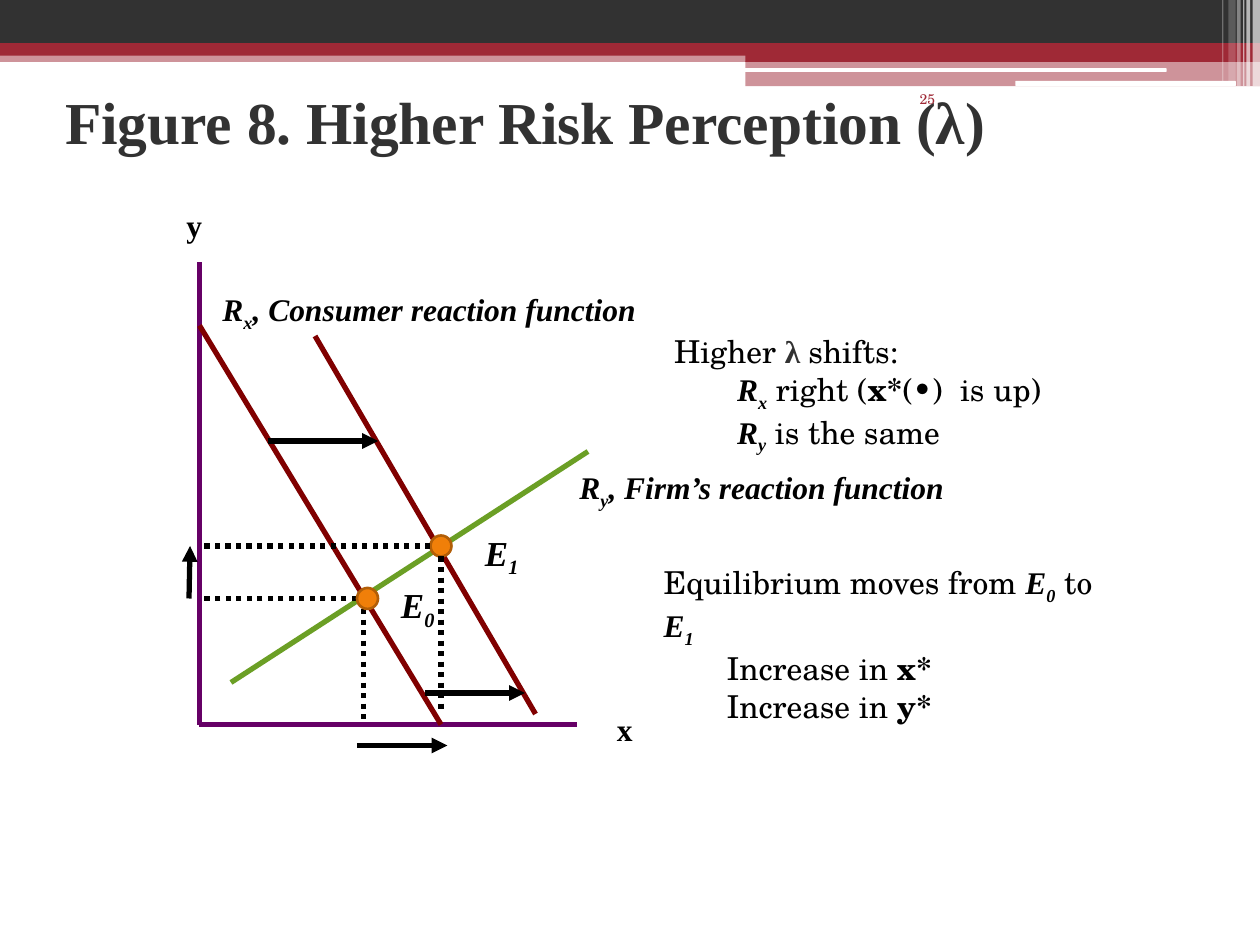
from dataclasses import dataclass
from typing import NamedTuple

from lxml.etree import SubElement
from pptx import Presentation
from pptx.dml.color import RGBColor
from pptx.enum.dml import MSO_LINE
from pptx.enum.shapes import MSO_CONNECTOR, MSO_SHAPE
from pptx.enum.text import MSO_ANCHOR, MSO_AUTO_SIZE, PP_ALIGN
from pptx.oxml.ns import qn
from pptx.util import Inches, Pt

COLS, ROWS = 120, 90


@dataclass(frozen=True)
class Theme:
    serif: str = "Times New Roman"
    school: str = "TeX Gyre Schola"
    dark: str = "323232"
    red: str = "9F2936"
    white: str = "FFFFFF"
    black: str = "000000"
    axis: str = "660066"
    maroon: str = "800000"
    green: str = "6B9F25"
    orange: str = "F07F09"
    rim: str = "B25E07"
    head: int = 34
    point: int = 20
    text: int = 18
    page: int = 8
    stroke: float = 3
    edge: float = 1.5


THEME = Theme()


class Box(NamedTuple):
    col: float
    row: float
    wide: float
    high: float


class Bar(NamedTuple):
    box: Box
    fill: str
    alpha: int = 100
    form: MSO_SHAPE = MSO_SHAPE.RECTANGLE


class Line(NamedTuple):
    start: tuple[float, float]
    end: tuple[float, float]
    color: str = THEME.black
    dots: bool = False
    arrow: bool = False


class Run(NamedTuple):
    text: str
    bold: bool = False
    face: str = THEME.school
    slant: bool = False
    sub: bool = False
    color: str = THEME.black


class Para(NamedTuple):
    runs: list[Run]
    level: int = 0


class Label(NamedTuple):
    box: Box
    runs: list[Run]
    size: int = THEME.text
    align: PP_ALIGN = PP_ALIGN.LEFT


def term(base: str, sub: str, tail: str = "") -> list[Run]:
    parts = [(base, False), (sub, True), (tail, False)]
    return [Run(text, True, THEME.serif, True, low) for text, low in parts if text]


def place(deck, box: Box) -> tuple[int, int, int, int]:
    cell_w, cell_h = deck.slide_width / COLS, deck.slide_height / ROWS
    return (round(box.col * cell_w), round(box.row * cell_h),
            round(box.wide * cell_w), round(box.high * cell_h))


def paint(shape, color: str, alpha: int = 100) -> None:
    shape.shadow.inherit = False
    shape.fill.solid()
    shape.fill.fore_color.rgb = RGBColor.from_string(color)
    if alpha < 100:
        tint = shape.fill._xPr.find(qn("a:solidFill"))[0]
        SubElement(tint, qn("a:alpha"), val=str(alpha * 1000))


def draw_bar(deck, slide, bar: Bar) -> None:
    shape = slide.shapes.add_shape(bar.form, *place(deck, bar.box))
    paint(shape, bar.fill, bar.alpha)
    shape.line.fill.background()


def draw_dot(deck, slide, box: Box) -> None:
    dot = slide.shapes.add_shape(MSO_SHAPE.OVAL, *place(deck, box))
    paint(dot, THEME.orange)
    dot.line.color.rgb = RGBColor.from_string(THEME.rim)
    dot.line.width = Pt(THEME.edge)


def draw_line(deck, slide, line: Line) -> None:
    ends = place(deck, Box(*line.start, *line.end))
    link = slide.shapes.add_connector(MSO_CONNECTOR.STRAIGHT, *ends)
    link.line.color.rgb = RGBColor.from_string(line.color)
    link.line.width = Pt(THEME.stroke)
    if line.dots:
        link.line.dash_style = MSO_LINE.ROUND_DOT
    if line.arrow:
        SubElement(link.line._get_or_add_ln(), qn("a:tailEnd"), type="triangle")
    SubElement(link._element.spPr, qn("a:effectLst"))


def write(para, runs: list[Run], size: int) -> None:
    for item in runs:
        run = para.add_run()
        run.text = item.text
        font = run.font
        font.name, font.size = item.face, Pt(size)
        font.bold, font.italic = item.bold, item.slant
        font.color.rgb = RGBColor.from_string(item.color)
        if item.sub:
            font._element.set("baseline", "-25000")


def draw_label(deck, slide, label: Label) -> None:
    frame = slide.shapes.add_textbox(*place(deck, label.box)).text_frame
    frame.word_wrap = True
    frame.auto_size = MSO_AUTO_SIZE.SHAPE_TO_FIT_TEXT
    para = frame.paragraphs[0]
    para.alignment = label.align
    write(para, label.runs, label.size)


def move(deck, shape, box: Box) -> None:
    shape.left, shape.top, shape.width, shape.height = place(deck, box)
    shape.text_frame.word_wrap = True


def fill_title(deck, shape, box: Box, run: Run) -> None:
    move(deck, shape, box)
    frame = shape.text_frame
    frame.auto_size = MSO_AUTO_SIZE.NONE
    frame.vertical_anchor = MSO_ANCHOR.MIDDLE
    frame.paragraphs[0].alignment = PP_ALIGN.LEFT
    write(frame.paragraphs[0], [run], THEME.head)


def fill_list(deck, shape, box: Box, paras: list[Para]) -> None:
    move(deck, shape, box)
    frame = shape.text_frame
    frame.auto_size = MSO_AUTO_SIZE.SHAPE_TO_FIT_TEXT
    for spot, item in enumerate(paras):
        para = frame.add_paragraph() if spot else frame.paragraphs[0]
        para.level = item.level
        para.space_before = Pt(0)
        props = para._p.get_or_add_pPr()
        props.set("marL", str(Inches(0.5) * item.level))
        props.set("indent", "0")
        SubElement(props, qn("a:buNone"))
        write(para, item.runs, THEME.text)


ROUND = MSO_SHAPE.ROUNDED_RECTANGLE
BARS = [
    Bar(Box(0, 4.8, COLS, 1.1), THEME.red, 50),
    Bar(Box(0, 0, COLS, 4.1), THEME.dark),
    Bar(Box(0, 4.1, COLS, 1.2), THEME.red),
    Bar(Box(71, 4.7, 49, 1.2), THEME.red),
    Bar(Box(71, 5.8, 49, 2.4), THEME.red, 50),
    Bar(Box(70.9, 6.5, 40.2, 0.36), THEME.white, form=ROUND),
    Bar(Box(96.7, 7.7, 21, 0.5), THEME.white, form=ROUND),
]
STRIPES = [(119.3, 0.7, 8.2, 65), (118.7, 0.36, 8.2, 65), (118.4, 0.12, 8.2, 60),
           (117.8, 0.36, 8.2, 40), (117, 0.7, 7.7, 20), (116.4, 0.12, 7.7, 30)]
BARS += [Bar(Box(col, 0, wide, high), THEME.white, alpha)
         for col, wide, high, alpha in STRIPES]

CURVES = [
    Line((19, 25), (19, 69), THEME.axis),
    Line((19, 69), (55, 69), THEME.axis),
    Line((19, 31), (42, 69), THEME.maroon),
    Line((22, 65), (56, 43), THEME.green),
    Line((34.6, 57), (34.6, 69), dots=True),
    Line((35, 57), (19, 57), dots=True),
    Line((30, 32), (51, 68), THEME.maroon),
    Line((25.5, 42), (36, 42), arrow=True),
    Line((40.5, 66), (50, 66), arrow=True),
]
DOTS = [Box(34, 56, 2, 2), Box(41, 51, 2, 2)]
GUIDES = [
    Line((41, 52), (19, 52), dots=True),
    Line((42, 53), (42, 68), dots=True),
    Line((34, 71), (42.6, 71), arrow=True),
    Line((18, 57), (18.1, 52), arrow=True),
]
LABELS = [
    Label(Box(86.4, 8, 12.6, 6), [Run("25", color=THEME.red)], THEME.page),
    Label(Box(14, 19, 9, 4.8), [Run("y", True, THEME.serif)], align=PP_ALIGN.CENTER),
    Label(Box(55, 67, 9, 4.8), [Run("x", True, THEME.serif)], align=PP_ALIGN.CENTER),
    Label(Box(20, 27, 50, 4.8), term("R", "x", ", Consumer reaction function")),
    Label(Box(54, 44, 38, 4.8), term("R", "y", ", Firm’s reaction function")),
    Label(Box(37, 55, 8, 5.2), term("E", "0"), THEME.point),
    Label(Box(45, 50, 8, 5.2), term("E", "1"), THEME.point),
]
SHIFTS = [
    Para([Run("Higher "), Run("λ ", True, THEME.serif, color=THEME.dark), Run("shifts:")]),
    Para(term("R", "x") + [Run(" right ("), Run("x*", True), Run("(•)  is up)")], 1),
    Para(term("R", "y") + [Run(" is the same")], 1),
]
MOVES = [Para([Run("Equilibrium moves from "), *term("E", "0"), Run(" to "), *term("E", "1")])]
MOVES += [Para([Run("Increase in "), Run(name, True)], 1) for name in ("x*", "y*")]


def main() -> None:
    deck = Presentation()
    deck.slide_width, deck.slide_height = Inches(10), Inches(7.5)
    slide = deck.slides.add_slide(deck.slide_layouts[3])
    title, first, second = slide.placeholders
    head = Run("Figure 8. Higher Risk Perception (λ)", True, THEME.serif, color=THEME.dark)
    fill_title(deck, title, Box(5, 6, 102, 11), head)
    fill_list(deck, first, Box(63, 31, 51, 12.1), SHIFTS)
    fill_list(deck, second, Box(62, 53, 46, 12.1), MOVES)
    steps = [(draw_bar, BARS), (draw_line, CURVES), (draw_dot, DOTS),
             (draw_line, GUIDES), (draw_label, LABELS)]
    for draw, items in steps:
        for item in items:
            draw(deck, slide, item)
    deck.save("out.pptx")


if __name__ == "__main__":
    main()
